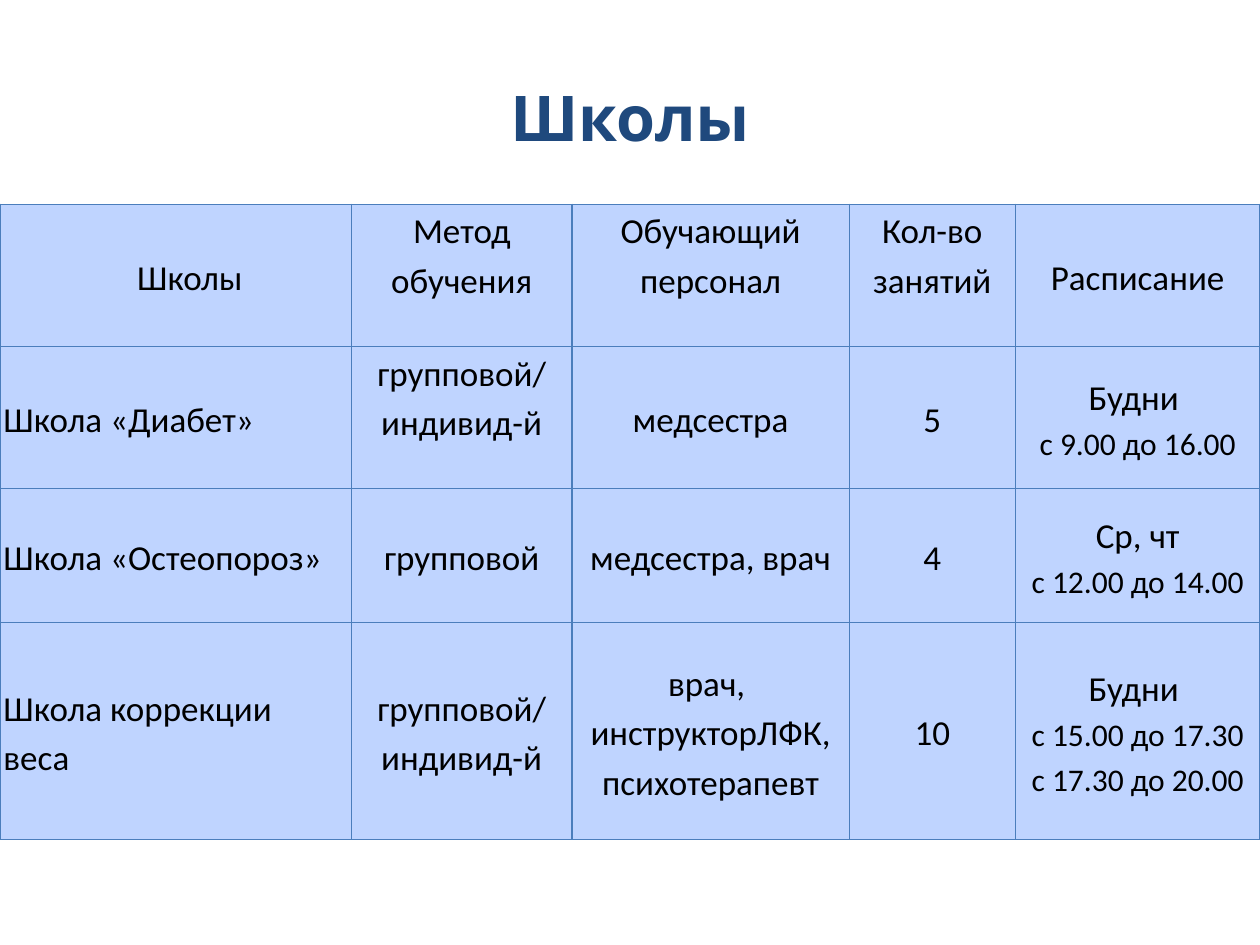
from lxml import etree
from pptx import Presentation
from pptx.dml.color import RGBColor
from pptx.enum.text import MSO_ANCHOR, PP_ALIGN
from pptx.oxml.ns import qn
from pptx.util import Pt

TOP, MIDDLE = MSO_ANCHOR.TOP, MSO_ANCHOR.MIDDLE
LEFT, CENTER = PP_ALIGN.LEFT, PP_ALIGN.CENTER
COLUMNS = [200.88, 126, 158.4, 95.04, 139.68]
ROWS = [81.36, 81.36, 76.32, 123.84]
SCHOOLS = [
    ["Школы", "Метод обучения", "Обучающий персонал", "Кол-во занятий", "Расписание"],
    ["Школа «Диабет»", "групповой/\nиндивид-й", "медсестра", "5",
     "Будни \nс 9.00 до 16.00"],
    ["Школа «Остеопороз»", "групповой", "медсестра, врач", "4",
     "Ср, чт\nс 12.00 до 14.00"],
    ["Школа коррекции  веса", "групповой/\nиндивид-й",
     "врач, \nинструкторЛФК,\nпсихотерапевт", "10",
     "Будни \nс 15.00 до 17.30\nс 17.30 до 20.00"],
]
TOP_CELLS = {(0, 1), (0, 2), (0, 3), (1, 1)}


def rgb(value):
    """Turn a hex string into a colour."""
    return RGBColor.from_string(value)


def format_runs(p, size, font, color, bold=False):
    """Give every run of a paragraph one font."""
    for r in p.runs:
        r.font.size = Pt(size)
        r.font.name = font
        r.font.bold = bold
        r.font.color.rgb = rgb(color)


def add_title(s, text):
    """Add the centred slide title."""
    sp = s.shapes.add_textbox(Pt(36), Pt(21.6), Pt(648), Pt(90))
    tf = sp.text_frame
    tf.word_wrap = True
    tf.vertical_anchor = MIDDLE
    tf.text = text
    p = tf.paragraphs[0]
    p.alignment = CENTER
    format_runs(p, 36, "Comic Neue", "1F497D", True)


def set_borders(cell, color, width):
    """Draw a solid line on all four sides of a cell."""
    pr = cell._tc.get_or_add_tcPr()
    for i, side in enumerate(("a:lnL", "a:lnR", "a:lnT", "a:lnB")):
        ln = etree.Element(qn(side), w=str(Pt(width)))
        fill = etree.SubElement(ln, qn("a:solidFill"))
        etree.SubElement(fill, qn("a:srgbClr"), val=color)
        pr.insert(i, ln)


def fill_cell(cell, text, align, anchor):
    """Write and format one table cell."""
    cell.fill.solid()
    cell.fill.fore_color.rgb = rgb("BFD4FF")
    set_borders(cell, "4B7EBC", 0.75)
    cell.margin_left = cell.margin_right = Pt(2)
    cell.margin_top = cell.margin_bottom = 0
    cell.vertical_anchor = anchor
    cell.text_frame.text = text
    for p in cell.text_frame.paragraphs:
        p.alignment = align
        p.line_spacing = 1.15
        format_runs(p, 18 if p.text.startswith("с ") else 20, "Calibri", "000000")


def add_schools(s):
    """Add the table of schools."""
    table = s.shapes.add_table(len(ROWS), len(COLUMNS), 0, Pt(116.64),
                               Pt(sum(COLUMNS)), Pt(sum(ROWS))).table
    table.first_row = table.horz_banding = False
    for column, width in zip(table.columns, COLUMNS):
        column.width = Pt(width)
    for i, (row, height) in enumerate(zip(table.rows, ROWS)):
        row.height = Pt(height)
        for j, text in enumerate(SCHOOLS[i]):
            align = LEFT if i and not j else CENTER
            anchor = TOP if (i, j) in TOP_CELLS else MIDDLE
            fill_cell(table.cell(i, j), text, align, anchor)
    p = table.cell(0, 0).text_frame.paragraphs[0]
    p._p.get_or_add_pPr().set("marL", str(Pt(16)))


def main():
    """Build and save the slide."""
    prs = Presentation()
    prs.slide_width, prs.slide_height = Pt(720), Pt(540)
    s = prs.slides.add_slide(prs.slide_layouts[6])
    add_title(s, "Школы")
    add_schools(s)
    prs.save("out.pptx")


if __name__ == "__main__":
    main()
